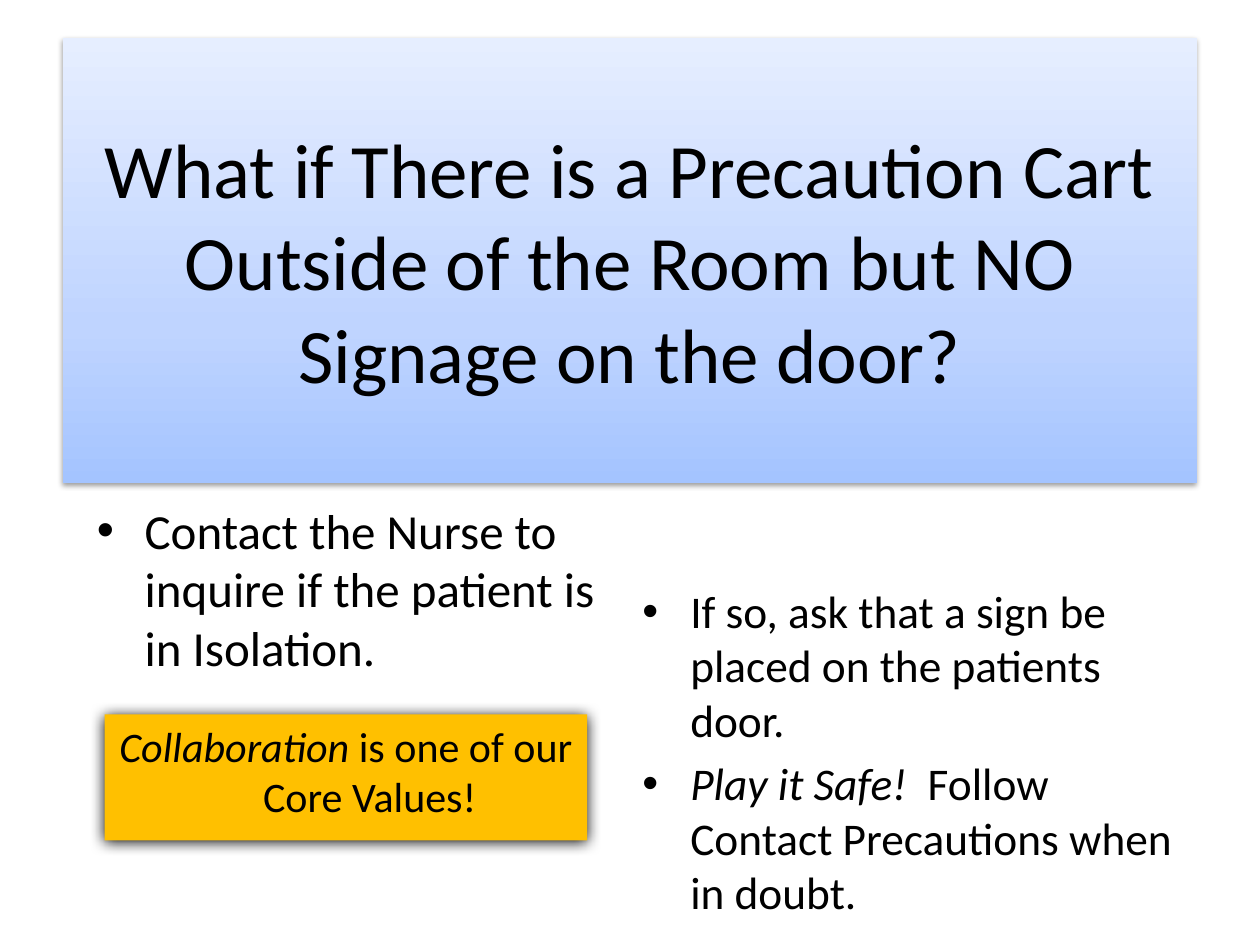
"""Builds the slide on a precaution cart without signage."""
import copy

import pptx
import pptx.dml.color
import pptx.enum.shapes
import pptx.enum.text
import pptx.oxml
import pptx.oxml.ns
import pptx.util
from pptx.util import Inches

RGBColor = pptx.dml.color.RGBColor
Anchor = pptx.enum.text.MSO_ANCHOR
Align = pptx.enum.text.PP_ALIGN
qn = pptx.oxml.ns.qn

BLACK = RGBColor(0x00, 0x00, 0x00)
AMBER = RGBColor(0xFF, 0xC0, 0x00)
BLUES = [
    (0, RGBColor(0xA4, 0xC4, 0xFF)),
    (0.35, RGBColor(0xBF, 0xD4, 0xFF)),
    (1, RGBColor(0xE6, 0xEE, 0xFF)),
]


class Deck:
    font = "Calibri"
    indent = Inches(0.38)

    def __init__(self):
        self.prs = pptx.Presentation()
        self.prs.slide_width, self.prs.slide_height = Inches(10), Inches(7.5)
        self.s = self.prs.slides.add_slide(self.prs.slide_layouts[5])

    def place(self, sp, box):
        sp.left, sp.top, sp.width, sp.height = [Inches(v) for v in box]

    def format_runs(self, p, size):
        for r in p.runs:
            r.font.name = self.font
            r.font.size = pptx.util.Pt(size)
            r.font.color.rgb = BLACK

    def shadow(self, sp, alpha, blur, dist):
        sp.shadow.inherit = False
        effects = sp._element.spPr.find(qn("a:effectLst"))
        effects.append(pptx.oxml.parse_xml(
            f'<a:outerShdw {pptx.oxml.ns.nsdecls("a")} blurRad="{pptx.util.Pt(blur)}" '
            f'dist="{pptx.util.Pt(dist)}" dir="5400000" rotWithShape="0">'
            f'<a:srgbClr val="{BLACK}"><a:alpha val="{alpha * 1000}"/></a:srgbClr>'
            '</a:outerShdw>'))

    def gradient(self, sp, stops):
        sp.fill.gradient()
        sp.fill.gradient_angle = 90
        gs_list = sp._element.spPr.find(qn("a:gradFill")).find(qn("a:gsLst"))
        while len(gs_list) < len(stops):
            gs_list.append(copy.deepcopy(gs_list[0]))
        for stop, (position, color) in zip(sp.fill.gradient_stops, stops):
            stop.position = position
            stop.color.rgb = color

    def title(self, text, box, size):
        sp = self.s.shapes.title
        self.place(sp, box)
        self.gradient(sp, BLUES)
        self.shadow(sp, 38, 3.1, 1.6)
        tf = sp.text_frame
        tf.text = text
        tf.word_wrap = True
        tf.auto_size = pptx.enum.text.MSO_AUTO_SIZE.NONE
        tf.vertical_anchor = Anchor.MIDDLE
        tf.paragraphs[0].alignment = Align.CENTER
        self.format_runs(tf.paragraphs[0], size)

    def paragraphs(self, tf, texts, size, align=Align.LEFT, bullet=True):
        tf.word_wrap = True
        tf.vertical_anchor = Anchor.TOP
        for i, (italic, plain) in enumerate(texts):
            p = tf.add_paragraph() if i else tf.paragraphs[0]
            p.alignment = align
            p.space_before = pptx.util.Pt(round(size * 0.2, 1))
            for text, slanted in ((italic, True), (plain, False)):
                if text:
                    r = p.add_run()
                    r.text = text
                    r.font.italic = slanted
            self.format_runs(p, size)
            pPr = p._p.get_or_add_pPr()
            pPr.set("marL", str(self.indent))
            pPr.set("indent", str(-self.indent))
            if bullet:
                for tag, key, value in (("a:buFont", "typeface", "Arial"),
                                        ("a:buChar", "char", "•")):
                    pPr.append(pptx.oxml.parse_xml(
                        f'<{tag} {pptx.oxml.ns.nsdecls("a")} {key}="{value}"/>'))

    def bullets(self, texts, box, size):
        sp = self.s.shapes.add_textbox(*[Inches(v) for v in box])
        self.paragraphs(sp.text_frame, texts, size)

    def callout(self, texts, box, size):
        sp = self.s.shapes.add_shape(
            pptx.enum.shapes.MSO_SHAPE.RECTANGLE, *[Inches(v) for v in box])
        sp.fill.solid()
        sp.fill.fore_color.rgb = AMBER
        sp.line.fill.background()
        self.shadow(sp, 100, 8.5, 1)
        self.paragraphs(sp.text_frame, texts, size, Align.CENTER, bullet=False)


def main():
    deck = Deck()
    deck.title("What if There is a Precaution Cart Outside of the Room but NO "
               "Signage on the door?", (0.5, 0.3, 9, 3.53), 44)
    deck.bullets([("", "Contact the Nurse to inquire if the patient is  in Isolation.")],
                 (0.67, 3.92, 4.42, 2.03), 28)
    deck.bullets([("", "If so, ask that a sign be placed on the patients door."),
                  ("Play it Safe!  ", "Follow Contact Precautions when in doubt.")],
                 (5, 4.58, 4.42, 2.37), 25.9)
    deck.callout([("Collaboration", " is one of our Core Values!")],
                 (0.83, 5.67, 3.83, 1), 24)
    deck.prs.save("out.pptx")


if __name__ == "__main__":
    main()
